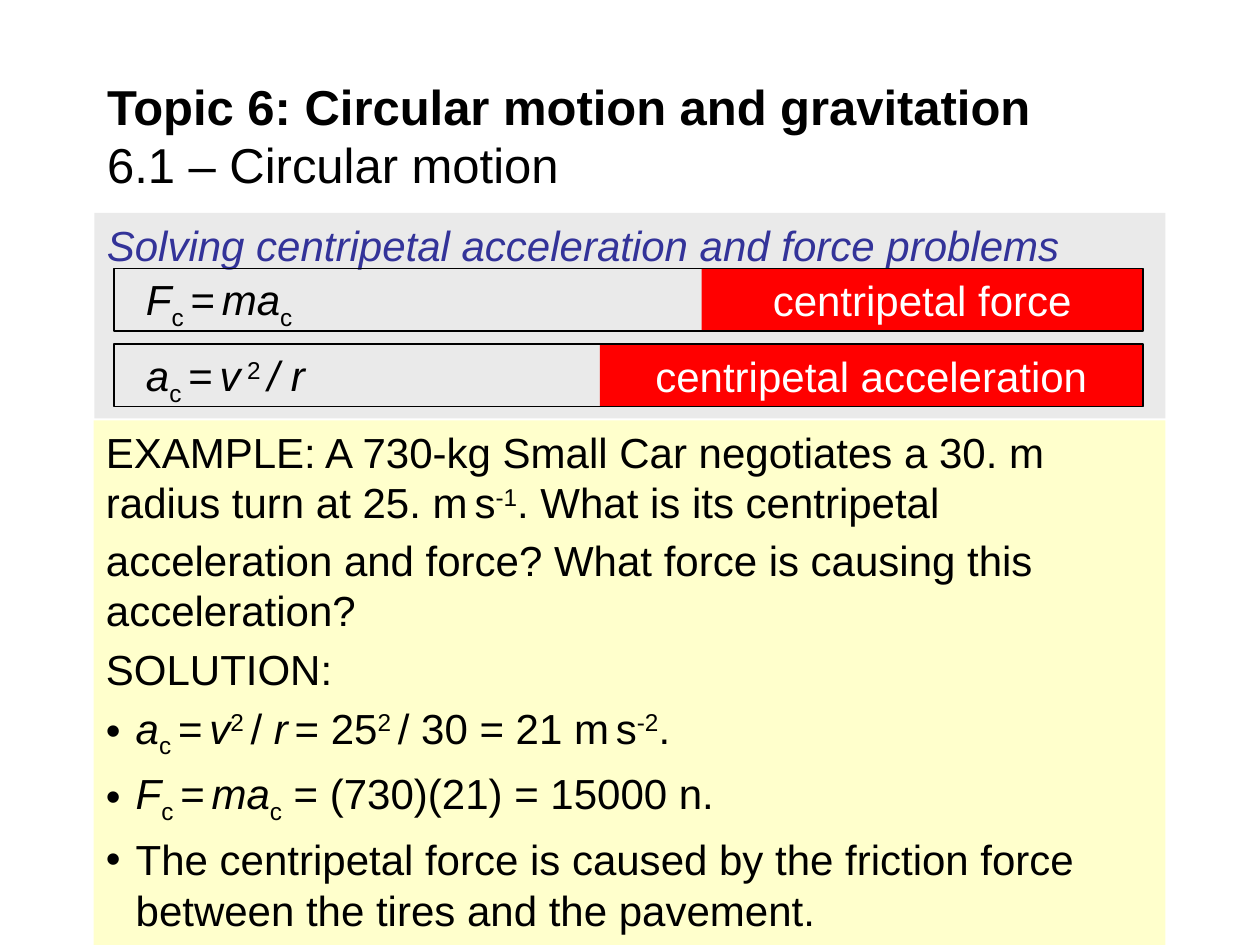
from lxml import etree
from pptx import Presentation
from pptx.dml.color import RGBColor
from pptx.enum.shapes import MSO_SHAPE
from pptx.enum.text import MSO_ANCHOR, PP_ALIGN
from pptx.oxml.ns import qn
from pptx.util import Pt

RECTANGLE = MSO_SHAPE.RECTANGLE
TOP, MIDDLE = MSO_ANCHOR.TOP, MSO_ANCHOR.MIDDLE
LEFT, CENTER = PP_ALIGN.LEFT, PP_ALIGN.CENTER

BLACK = RGBColor(0x00, 0x00, 0x00)
WHITE = RGBColor(0xFF, 0xFF, 0xFF)
GRAY = RGBColor(0xEA, 0xEA, 0xEA)
CREAM = RGBColor(0xFF, 0xFF, 0xCC)
RED = RGBColor(0xFF, 0x00, 0x00)
INDIGO = RGBColor(0x33, 0x33, 0x99)

BASELINES = {"sub": "-25000", "sup": "30000"}
THIN_GAP = (" ", "sub")


def add_box(left, top, width, height, fill=None, outline=None):
    box = slide.shapes.add_shape(RECTANGLE, Pt(left), Pt(top), Pt(width), Pt(height))
    box.shadow.inherit = False
    if fill is None:
        box.fill.background()
    else:
        box.fill.solid()
        box.fill.fore_color.rgb = fill
    if outline is None:
        box.line.fill.background()
    else:
        box.line.color.rgb = outline
        box.line.width = Pt(1)
    box.text_frame.word_wrap = True
    box.text_frame.vertical_anchor = TOP
    return box


def write(paragraph, runs, color=BLACK, **paragraph_format):
    for attribute, value in {"alignment": LEFT, "space_before": Pt(4.8), **paragraph_format}.items():
        setattr(paragraph, attribute, value)
    for text, style in runs:
        run = paragraph.add_run()
        run.text = text
        for attribute, value in {"name": "Arial", "size": Pt(24), "italic": style == "italic"}.items():
            setattr(run.font, attribute, value)
        run.font.color.rgb = color
        if style in BASELINES:
            run.font._element.set("baseline", BASELINES[style])


prs = Presentation()
prs.slide_width, prs.slide_height = Pt(720), Pt(540)
slide = prs.slides.add_slide(prs.slide_layouts[5])

heading_panel = add_box(54, 121.7, 612, 117.4, GRAY)
write(heading_panel.text_frame.paragraphs[0],
      [("Solving centripetal acceleration and force problems", "italic")], INDIGO)

title = slide.shapes.title
title.left, title.top, title.width, title.height = Pt(54), Pt(41.8), Pt(612), Pt(70.6)
title.text_frame.vertical_anchor = MIDDLE
title_lines = title.text_frame.paragraphs[0]
title_lines.alignment = LEFT
for text, bold in [("Topic 6: Circular motion and gravitation", True), ("6.1 – Circular motion", False)]:
    if title_lines.runs:
        title_lines.add_line_break()
    run = title_lines.add_run()
    run.text = text
    for attribute, value in {"name": "Arial", "size": Pt(28), "bold": bold}.items():
        setattr(run.font, attribute, value)
    run.font.color.rgb = BLACK

force_formula = [("F", "italic"), ("c ", "sub"), ("=", ""), THIN_GAP, ("ma", "italic")]
acceleration_formula = [("a", "italic"), ("c ", "sub"), ("=", ""), THIN_GAP, ("v", "italic")]

example = [
    ([("EXAMPLE: A 730-kg Small Car negotiates a 30. m radius turn at 25. m", ""), THIN_GAP,
      ("s", ""), ("-1", "sup"),
      (". What is its centripetal acceleration and force? "
       "What force is causing this acceleration?", "")], False),
    ([("SOLUTION:", "")], False),
    (acceleration_formula + [("2 ", "sup"), ("/ ", ""), ("r", "italic"), THIN_GAP, ("= 25", ""),
                             ("2 ", "sup"), ("/ 30 = 21 m", ""), THIN_GAP, ("s", ""),
                             ("-2", "sup"), (".", "")], True),
    (force_formula + [("c", "sub"), (" = (730)(21) = 15000 n.", "")], True),
    ([("The centripetal force is caused by the friction force "
       "between the tires and the pavement.", "")], True),
]
example_text = add_box(53.5, 240.2, 612.5, 299.8, CREAM).text_frame
for index, (runs, bulleted) in enumerate(example):
    paragraph = example_text.add_paragraph() if index else example_text.paragraphs[0]
    write(paragraph, runs)
    if bulleted:
        properties = paragraph._p.get_or_add_pPr()
        properties.set("marL", str(Pt(17)))
        properties.set("indent", str(-Pt(17)))
        etree.SubElement(properties, qn("a:buFont")).set("typeface", "Arial")
        etree.SubElement(properties, qn("a:buChar")).set("char", "•")

formula_rows = [
    (153.4, 401, "centripetal force", force_formula + [("c", "sub")]),
    (196.7, 342.8, "centripetal acceleration",
     acceleration_formula + [(" 2 ", "sup"), ("/ r", "italic")]),
]
frame_left, frame_right, row_height = 65.3, 653, 35.6
for top, label_left, label, formula in formula_rows:
    formula_box = slide.shapes.add_textbox(Pt(76.3), Pt(top), Pt(162), Pt(33))
    formula_box.text_frame.word_wrap = True
    write(formula_box.text_frame.paragraphs[0], formula, line_spacing=0.9)
    label_box = add_box(label_left, top, frame_right - label_left, row_height, RED)
    write(label_box.text_frame.paragraphs[0], [(label, "")], WHITE,
          alignment=CENTER, space_before=Pt(12))
    add_box(frame_left, top, frame_right - frame_left, row_height, outline=BLACK)

prs.save("out.pptx")
